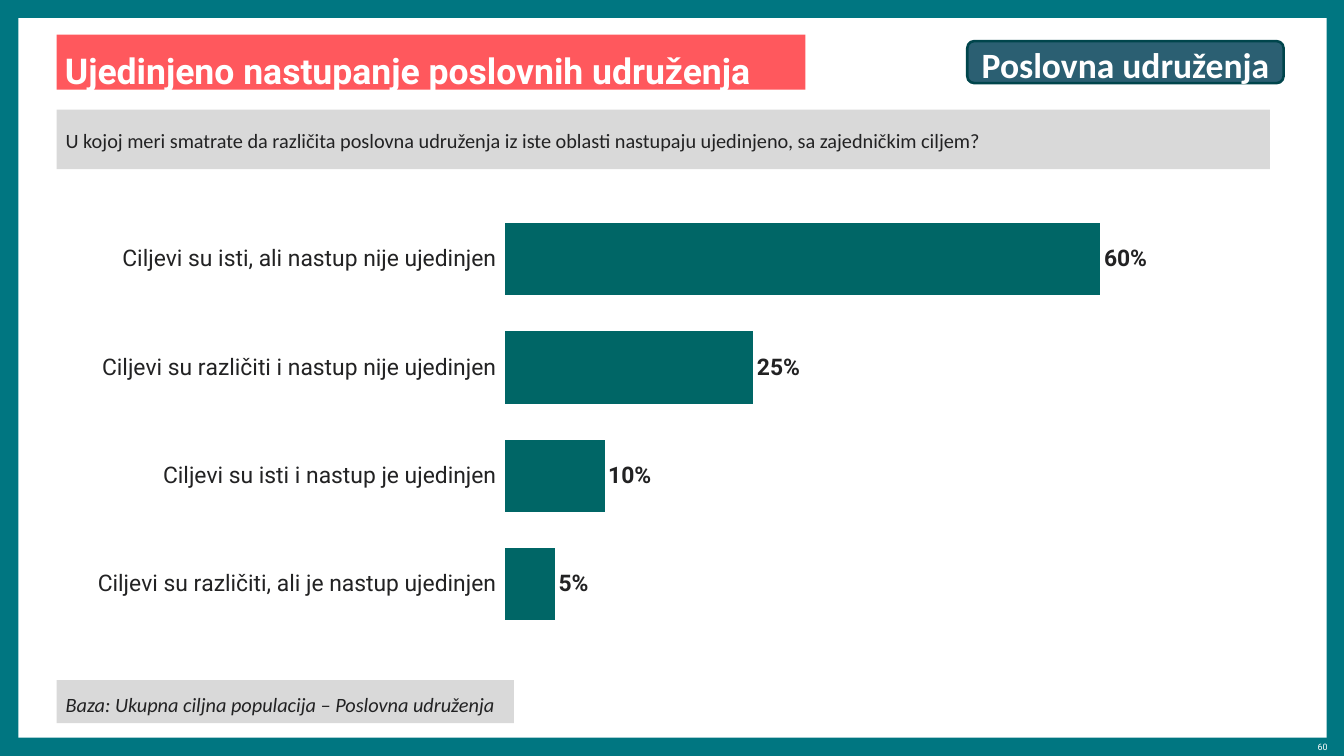
from lxml import etree
from pptx import Presentation
from pptx.chart.data import CategoryChartData
from pptx.dml.color import RGBColor
from pptx.enum.chart import XL_CHART_TYPE, XL_LABEL_POSITION, XL_TICK_MARK
from pptx.enum.shapes import MSO_SHAPE
from pptx.enum.text import MSO_ANCHOR, MSO_AUTO_SIZE, PP_ALIGN
from pptx.oxml import parse_xml
from pptx.oxml.ns import nsdecls, qn
from pptx.util import Inches, Pt

TEAL = RGBColor(0x00, 0x76, 0x81)
BAR_TEAL = RGBColor(0x00, 0x66, 0x66)
BADGE_BLUE = RGBColor(0x2B, 0x5F, 0x72)
BADGE_LINE = RGBColor(0x00, 0x45, 0x4C)
CORAL = RGBColor(0xFF, 0x58, 0x5D)
GREY = RGBColor(0xD9, 0xD9, 0xD9)
INK = RGBColor(0x22, 0x22, 0x23)
WHITE = RGBColor(0xFF, 0xFF, 0xFF)
LEFT = 0.62


def add_box(kind, left, top, width, height, fill):
    sp = s.shapes.add_shape(kind, Inches(left), Inches(top), Inches(width), Inches(height))
    sp.shadow.inherit = False
    sp.fill.solid()
    sp.fill.fore_color.rgb = fill
    sp.line.fill.background()
    return sp


def write(sp, text, size, font, color, spacing, insets, align=PP_ALIGN.LEFT,
          anchor=MSO_ANCHOR.MIDDLE, wrap=True, bold=False, italic=False):
    """Fill a shape with one formatted paragraph and return it; insets run left, top, right, bottom."""
    tf = sp.text_frame
    tf.auto_size = MSO_AUTO_SIZE.NONE
    tf.word_wrap = wrap
    tf.vertical_anchor = anchor
    tf.margin_left, tf.margin_top, tf.margin_right, tf.margin_bottom = map(Inches, insets)
    p = tf.paragraphs[0]
    p.alignment = align
    p.line_spacing = spacing
    r = p.add_run()
    r.text = text
    r.font.size = Pt(size)
    r.font.name = font
    r.font.color.rgb = color
    r.font.bold = bold
    r.font.italic = italic
    return p


prs = Presentation()
prs.slide_width = Inches(14.7)
prs.slide_height = Inches(8.27)
s = prs.slides.add_slide(prs.slide_layouts[5])
s.background.fill.solid()
s.background.fill.fore_color.rgb = TEAL

# White page behind everything, with the slide number on the frame
title = s.shapes.title
page = add_box(MSO_SHAPE.RECTANGLE, 0.2, 0.2, 14.31, 7.87, WHITE)
title.element.addprevious(page.element)
number = s.shapes.add_textbox(Inches(13.73), Inches(8.1), Inches(0.79), Inches(0.13))
write(number, "60", 7, "Roboto", WHITE, 1.1, (0, 0, 0, 0),
      align=PP_ALIGN.RIGHT, anchor=MSO_ANCHOR.TOP)

# Title
title.left, title.top = Inches(LEFT), Inches(0.38)
title.width, title.height = Inches(8.19), Inches(0.6)
title.fill.solid()
title.fill.fore_color.rgb = CORAL
write(title, "Ujedinjeno nastupanje poslovnih udruženja", 28, "Roboto", WHITE, Pt(41),
      (0.09, 0.08, 0.09, 0), wrap=False, bold=True)

# Bar chart
data = CategoryChartData(number_format="General")
data.categories = [
    "Ciljevi su isti, ali nastup nije ujedinjen",
    "Ciljevi su različiti i nastup nije ujedinjen",
    "Ciljevi su isti i nastup je ujedinjen",
    "Ciljevi su različiti, ali je nastup ujedinjen",
]
data.add_series("Series 1", [60, 25, 10, 5])
chart = s.shapes.add_chart(XL_CHART_TYPE.BAR_CLUSTERED, Inches(0.81), Inches(2.15),
                           Inches(12.55), Inches(4.93), data).chart
chart.has_legend = False
chart.has_title = False
chart.font.size = Pt(18)
chart.font.name = "Roboto"
chart.font.color.rgb = INK

cat_axis = chart.category_axis
cat_axis.reverse_order = True
cat_axis.major_tick_mark = XL_TICK_MARK.OUTSIDE
cat_axis.format.line.fill.background()
val_axis = chart.value_axis
val_axis.minimum_scale = 0
val_axis.maximum_scale = 70
val_axis.has_major_gridlines = False
val_axis.visible = False

plot = chart.plots[0]
plot.gap_width = 50
plot.vary_by_categories = False
bars = plot.series[0]
bars.format.fill.solid()
bars.format.fill.fore_color.rgb = BAR_TEAL
labels = bars.data_labels
labels.show_value = True
labels.number_format = '#"%"'
labels.number_format_is_linked = False
labels.position = XL_LABEL_POSITION.OUTSIDE_END
labels.font.size = Pt(18)
labels.font.name = "Roboto"
labels.font.bold = True
labels.font.color.rgb = INK

# Fixed plot area, as fractions of the chart
plot_area = chart.element.find(".//" + qn("c:plotArea"))
for old in plot_area.findall(qn("c:layout")):
    plot_area.remove(old)
layout = parse_xml(f"<c:layout {nsdecls('c')}><c:manualLayout/></c:layout>")
settings = [("layoutTarget", "inner"), ("xMode", "edge"), ("yMode", "edge"),
            ("x", "0.376"), ("y", "0.019"), ("w", "0.605"), ("h", "0.962")]
for tag, value in settings:
    etree.SubElement(layout[0], qn("c:" + tag)).set("val", value)
plot_area.insert(0, layout)

# Grey boxes: sample base and question
base = add_box(MSO_SHAPE.RECTANGLE, LEFT, 7.44, 5, 0.47, GREY)
write(base, "Baza: Ukupna ciljna populacija – Poslovna udruženja", 16, "Calibri", INK, 1.2,
      (0.1, 0, 0.1, 0), italic=True)
question = add_box(MSO_SHAPE.RECTANGLE, LEFT, 1.2, 13.27, 0.65, GREY)
p = write(question, "U kojoj meri smatrate da različita poslovna udruženja iz iste oblasti "
          "nastupaju ujedinjeno, sa zajedničkim ciljem?", 16, "Calibri", INK, 1.1,
          (0.1, 0, 0.1, 0))
p.space_before = p.space_after = Pt(6)

# Badge
badge = add_box(MSO_SHAPE.ROUNDED_RECTANGLE, 10.58, 0.45, 3.46, 0.46, BADGE_BLUE)
badge.line.color.rgb = BADGE_LINE
badge.line.width = Pt(2)
p = write(badge, "Poslovna udruženja", 28, "Calibri", WHITE, 1.1,
          (0.04, 0.04, 0.04, 0.04), align=PP_ALIGN.CENTER, bold=True)
p.space_before = Pt(24)

prs.save("out.pptx")
